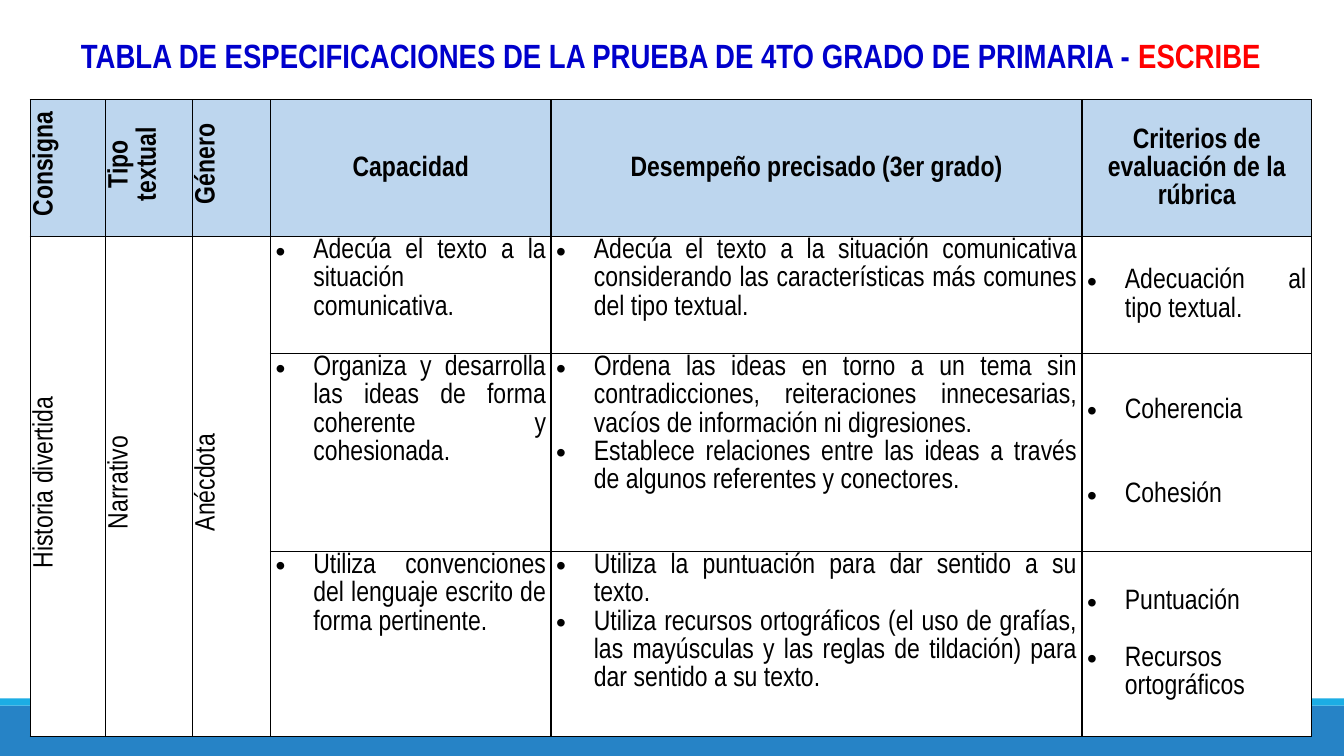
from dataclasses import dataclass

from lxml import etree
from pptx import Presentation
from pptx import util as u
from pptx.dml import color
from pptx.enum import shapes, text
from pptx.oxml import ns


@dataclass(frozen=True)
class Theme:
    font: str = "Arial Narrow"
    title_size: float = 24
    body_size: float = 20
    line_spacing: float = 1.07
    border: float = 1
    title: str = "0000CC"
    accent: str = "FF0000"
    ink: str = "000000"
    header: str = "BDD6EE"
    paper: str = "FFFFFF"
    band: str = "2683C6"
    stripe: str = "1CADE4"


def apply(target, values):
    for name, value in values.items():
        setattr(target, name, value)


def child(parent, tag, **attributes):
    return etree.SubElement(parent, ns.qn(tag), attributes)


class Sheet:
    def __init__(self, slide, theme):
        self.slide = slide
        self.theme = theme

    def bar(self, left, top, width, height, fill):
        bar = self.slide.shapes.add_shape(
            shapes.MSO_SHAPE.RECTANGLE, *map(u.Pt, (left, top, width, height)))
        bar.shadow.inherit = False
        bar.fill.solid()
        bar.fill.fore_color.rgb = color.RGBColor.from_string(fill)
        bar.line.fill.background()

    def run(self, paragraph, words, size, tint, bold):
        run = paragraph.add_run()
        run.text = words
        apply(run.font, {"name": self.theme.font, "size": u.Pt(size), "bold": bold})
        run.font.color.rgb = color.RGBColor.from_string(tint)

    def heading(self, left, top, width, height, parts):
        frame = self.slide.shapes.add_textbox(
            *map(u.Pt, (left, top, width, height))).text_frame
        apply(frame, {"word_wrap": True,
                      "auto_size": text.MSO_AUTO_SIZE.SHAPE_TO_FIT_TEXT})
        paragraph = frame.paragraphs[0]
        apply(paragraph, {"alignment": text.PP_ALIGN.CENTER,
                          "line_spacing": self.theme.line_spacing,
                          "space_after": u.Pt(8)})
        for words, tint in parts:
            self.run(paragraph, words, self.theme.title_size, tint, True)

    def table(self, left, top, widths, heights):
        table = self.slide.shapes.add_table(
            len(heights), len(widths),
            *map(u.Pt, (left, top, sum(widths), sum(heights)))).table
        apply(table, {"first_row": False, "horz_banding": False})
        for column, width in zip(table.columns, widths):
            column.width = u.Pt(width)
        for row, height in zip(table.rows, heights):
            row.height = u.Pt(height)
        for cell in table.iter_cells():
            self.border(cell)
        return table

    def border(self, cell):
        properties = cell._tc.get_or_add_tcPr()
        for side in "LRTB":
            edge = child(properties, f"a:ln{side}", w=str(u.Pt(self.theme.border)))
            child(child(edge, "a:solidFill"), "a:srgbClr", val=self.theme.ink)

    def cell(self, cell, items, fill, bold=False, vertical=False,
             bullets=False, middle=True, gap=0):
        anchor = text.MSO_ANCHOR.MIDDLE if middle else text.MSO_ANCHOR.TOP
        apply(cell, {"margin_left": u.Pt(3.6), "margin_right": u.Pt(3.6),
                     "margin_top": 0, "margin_bottom": 0,
                     "vertical_anchor": anchor})
        cell.fill.solid()
        cell.fill.fore_color.rgb = color.RGBColor.from_string(fill)
        if vertical:
            cell._tc.get_or_add_tcPr().set("vert", "vert270")
        for index, words in enumerate(items):
            frame = cell.text_frame
            paragraph = frame.add_paragraph() if index else frame.paragraphs[0]
            align = text.PP_ALIGN.JUSTIFY if bullets else text.PP_ALIGN.CENTER
            apply(paragraph, {"alignment": align,
                              "line_spacing": self.theme.line_spacing,
                              "space_before": u.Pt(gap if index else 0)})
            if bullets:
                self.indent(paragraph, 27, -27)
                properties = paragraph._p.get_or_add_pPr()
                child(properties, "a:buFont", typeface="Arial")
                child(properties, "a:buChar", char="•")
            elif vertical:
                self.indent(paragraph, 5.65, 0)
            self.run(paragraph, words, self.theme.body_size, self.theme.ink, bold)

    def indent(self, paragraph, margin, first):
        properties = paragraph._p.get_or_add_pPr()
        properties.set("marL", str(u.Pt(margin)))
        properties.set("indent", str(u.Pt(first)))


HEADERS = ["Consigna", "Tipo textual", "Género", "Capacidad",
           "Desempeño precisado (3er grado)",
           "Criterios de evaluación de la rúbrica"]
TASK = ["Historia divertida", "Narrativo", "Anécdota"]
CRITERIA_GAPS = [0, 40.4, 20.2]
SKILLS = [
    (["Adecúa el texto a la situación comunicativa."],
     ["Adecúa el texto a la situación comunicativa considerando las "
      "características más comunes del tipo textual."],
     ["Adecuación al tipo textual."]),
    (["Organiza y desarrolla las ideas de forma coherente y cohesionada."],
     ["Ordena las ideas en torno a un tema sin contradicciones, reiteraciones "
      "innecesarias, vacíos de información ni digresiones.",
      "Establece relaciones entre las ideas a través de algunos referentes y "
      "conectores."],
     ["Coherencia", "Cohesión"]),
    (["Utiliza convenciones del lenguaje escrito de forma pertinente."],
     ["Utiliza la puntuación para dar sentido a su texto.",
      "Utiliza recursos ortográficos (el uso de grafías, las mayúsculas y las "
      "reglas de tildación) para dar sentido a su texto."],
     ["Puntuación", "Recursos ortográficos"]),
]


def main():
    deck = Presentation()
    apply(deck, {"slide_width": u.Pt(960), "slide_height": u.Pt(540)})
    theme = Theme()
    sheet = Sheet(deck.slides.add_slide(deck.slide_layouts[6]), theme)

    sheet.bar(0, 504, 960, 36, theme.band)
    sheet.bar(0, 498.8, 960, 5.2, theme.stripe)
    sheet.heading(21.6, 19.4, 915, 36.7, [
        ("TABLA DE ESPECIFICACIONES DE LA PRUEBA DE 4TO GRADO DE PRIMARIA - ",
         theme.title),
        ("ESCRIBE", theme.accent)])

    matrix = sheet.table(21.6, 71.2, [53.6, 62.3, 55.8, 200.4, 379.3, 163.9],
                         [92.9, 83.6, 141.4, 132.4])
    for column, header in enumerate(HEADERS):
        sheet.cell(matrix.cell(0, column), [header], theme.header,
                   bold=True, vertical=column < len(TASK))
    for column, label in enumerate(TASK):
        matrix.cell(1, column).merge(matrix.cell(len(SKILLS), column))
        sheet.cell(matrix.cell(1, column), [label], theme.paper, vertical=True)
    for row, (skill, gap) in enumerate(zip(SKILLS, CRITERIA_GAPS), 1):
        for column, items in enumerate(skill, len(TASK)):
            criteria = column == len(HEADERS) - 1
            sheet.cell(matrix.cell(row, column), items, theme.paper, bullets=True,
                       middle=criteria, gap=gap if criteria else 0)

    deck.save("out.pptx")


if __name__ == "__main__":
    main()
